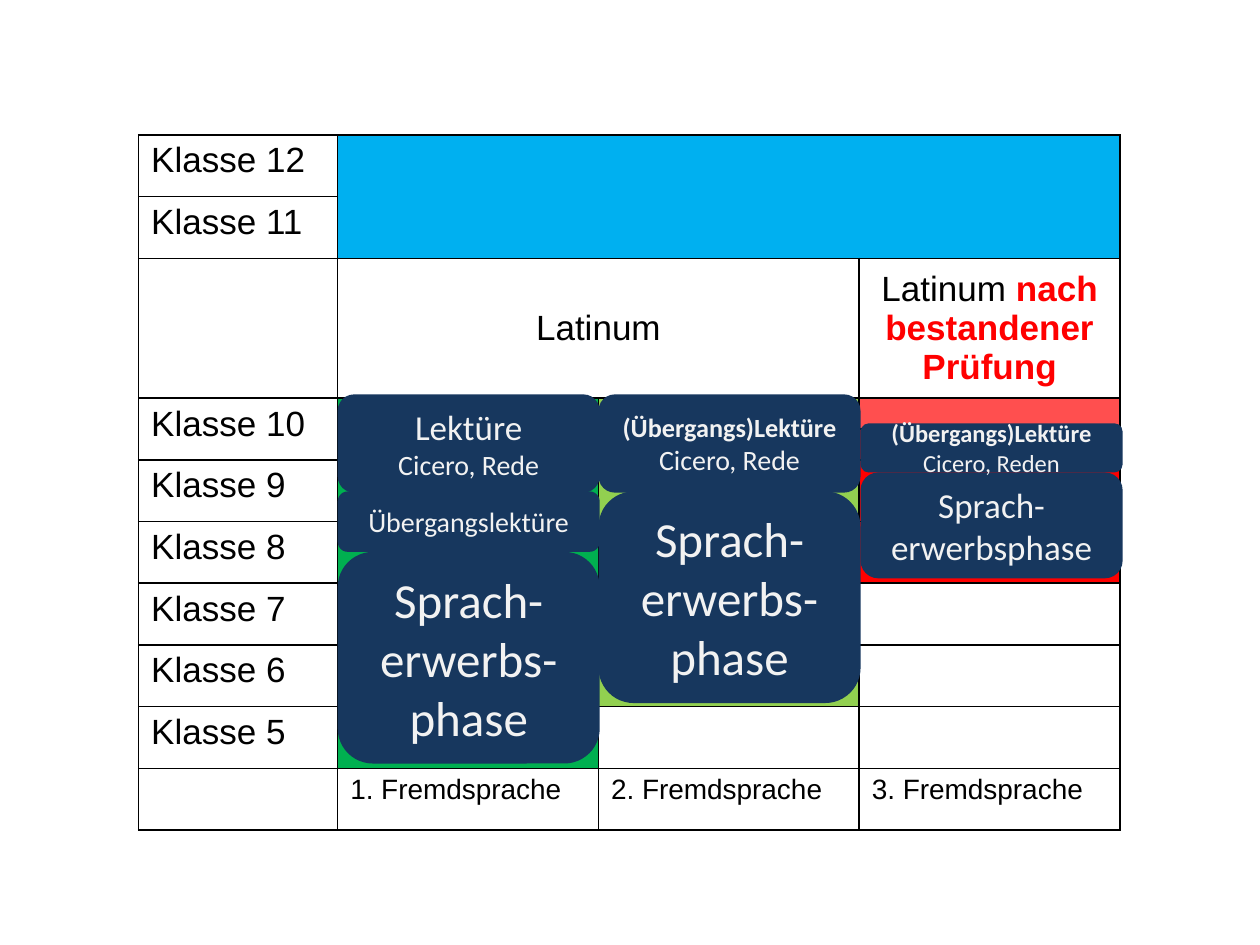
"""Build a slide showing the Latin course phases by school class and language order."""
from dataclasses import dataclass

from lxml import etree
from pptx import Presentation
from pptx.dml.color import RGBColor
from pptx.enum.shapes import MSO_SHAPE
from pptx.enum.text import MSO_ANCHOR, PP_ALIGN
from pptx.oxml.ns import qn
from pptx.slide import Slide
from pptx.table import Table, _Cell
from pptx.text.text import TextFrame
from pptx.util import Inches, Pt

ROUNDED = MSO_SHAPE.ROUNDED_RECTANGLE
MIDDLE = MSO_ANCHOR.MIDDLE
CENTER = PP_ALIGN.CENTER

BLACK = RGBColor(0x00, 0x00, 0x00)
NAVY = RGBColor(0x17, 0x37, 0x5E)
PALE = RGBColor(0xF2, 0xF2, 0xF2)
BLUE = RGBColor(0x00, 0xB0, 0xF0)
GREEN = RGBColor(0x00, 0xB0, 0x50)
LIME = RGBColor(0x92, 0xD0, 0x50)
CORAL = RGBColor(0xFF, 0x4F, 0x4F)
RED = RGBColor(0xFF, 0x00, 0x00)

ROW = 0.49
ROW_HEIGHTS = [ROW, ROW, 1.11, ROW / 2, ROW / 2] + [ROW] * 6
COLUMN_WIDTHS = [1.58, 2.07, 2.07, 2.07]
EXAM_ROW, SPLIT_ROW, LANGUAGE_ROW = 2, 3, 10
CLASS_ROWS = {12: 0, 11: 1, 10: 3, 9: 5, 8: 6, 7: 7, 6: 8, 5: 9}
MERGES = [((0, 1), (1, 3)), ((2, 1), (2, 2))] + [
    ((SPLIT_ROW, column), (SPLIT_ROW + 1, column)) for column in range(3)
]


@dataclass(frozen=True)
class Area:
    """A coloured block of table cells, with inclusive bounds."""

    color: RGBColor
    rows: tuple[int, int]
    columns: tuple[int, int]


@dataclass(frozen=True)
class Line:
    """One paragraph of a phase box."""

    text: str
    size: int
    bold: bool = False


@dataclass(frozen=True)
class Phase:
    """A rounded box for one learning phase."""

    left: float
    top: float
    height: float
    lines: tuple[Line, ...]


AREAS = [
    Area(BLUE, (0, 1), (1, 3)),
    Area(GREEN, (3, 9), (1, 1)),
    Area(LIME, (3, 8), (2, 2)),
    Area(CORAL, (3, 3), (3, 3)),
    Area(RED, (4, 6), (3, 3)),
]

PHASE_WIDTH = 2.08
FIRST, SECOND, THIRD = 2.68, 4.75, 6.83
ACQUISITION = (Line("Sprach-erwerbs-phase", 28),)
READING = "(Übergangs)Lektüre"
SPEECH = Line("Cicero, Rede", 16)
PHASES = [
    Phase(FIRST, 4.38, 1.68, ACQUISITION),
    Phase(FIRST, 3.9, 0.48, (Line("Übergangslektüre", 16),)),
    Phase(FIRST, 3.13, 0.78, (Line("Lektüre", 20), SPEECH)),
    Phase(SECOND, 3.9, 1.68, ACQUISITION),
    Phase(SECOND, 3.13, 0.78, (Line(READING, 15, True), SPEECH)),
    Phase(THIRD, 3.75, 0.84, (Line("Sprach-erwerbsphase", 20),)),
    Phase(THIRD, 3.36, 0.39, (Line(READING, 14, True), Line("Cicero, Reden", 14))),
]


def format_runs(text_frame: TextFrame, name: str, size: int, color: RGBColor) -> None:
    """Give every run of a text frame the same font."""
    for paragraph in text_frame.paragraphs:
        for run in paragraph.runs:
            run.font.name = name
            run.font.size = Pt(size)
            run.font.color.rgb = color


def draw_borders(cell: _Cell, dashed_side: str | None) -> None:
    """Outline a cell in black, with at most one dashed side."""
    properties = cell._tc.get_or_add_tcPr()
    for side in ("lnL", "lnR", "lnT", "lnB"):
        border = etree.SubElement(properties, qn(f"a:{side}"), w=str(Pt(1)))
        fill = etree.SubElement(border, qn("a:solidFill"))
        etree.SubElement(fill, qn("a:srgbClr"), val=str(BLACK))
        style = "sysDash" if side == dashed_side else "solid"
        etree.SubElement(border, qn("a:prstDash"), val=style)


def style_cell(table: Table, row: int, column: int) -> None:
    """Set the borders, fill and empty-line size of one cell."""
    cell = table.cell(row, column)
    dashed_sides = {(SPLIT_ROW, 3): "lnB", (SPLIT_ROW + 1, 3): "lnT"}
    draw_borders(cell, dashed_sides.get((row, column)))
    cell.fill.background()
    for area in AREAS:
        if (area.rows[0] <= row <= area.rows[1]
                and area.columns[0] <= column <= area.columns[1]):
            cell.fill.solid()
            cell.fill.fore_color.rgb = area.color
    if not cell.text_frame.text:
        paragraph = cell.text_frame.paragraphs[0]
        etree.SubElement(paragraph._p, qn("a:endParaRPr"), sz="800")


def write_cell(cell: _Cell, text: str, size: int = 20, centered: bool = False) -> None:
    """Write plain black text into a cell."""
    cell.text_frame.text = text
    if centered:
        cell.vertical_anchor = MIDDLE
        cell.text_frame.paragraphs[0].alignment = CENTER
    format_runs(cell.text_frame, "Arial", size, BLACK)


def add_class_table(slide: Slide) -> None:
    """Add the table of classes and languages."""
    table = slide.shapes.add_table(
        len(ROW_HEIGHTS), len(COLUMN_WIDTHS), Inches(1.1), Inches(1.07),
        Inches(sum(COLUMN_WIDTHS)), Inches(sum(ROW_HEIGHTS)),
    ).table
    table.first_row = False
    table.horz_banding = False
    for column, width in zip(table.columns, COLUMN_WIDTHS):
        column.width = Inches(width)
    for row, height in zip(table.rows, ROW_HEIGHTS):
        row.height = Inches(height)
    for start, end in MERGES:
        table.cell(*start).merge(table.cell(*end))

    for number, row in CLASS_ROWS.items():
        write_cell(table.cell(row, 0), f"Klasse {number}")
    for number in range(1, 4):
        write_cell(table.cell(LANGUAGE_ROW, number), f"{number}. Fremdsprache", 16)
    write_cell(table.cell(EXAM_ROW, 1), "Latinum", centered=True)
    exam_cell = table.cell(EXAM_ROW, 3)
    write_cell(exam_cell, "Latinum ", centered=True)
    condition = exam_cell.text_frame.paragraphs[0].add_run()
    condition.text = "nach bestandener Prüfung"
    format_runs(exam_cell.text_frame, "Arial", 20, BLACK)
    condition.font.bold = True
    condition.font.color.rgb = RED

    for row in range(len(ROW_HEIGHTS)):
        for column in range(len(COLUMN_WIDTHS)):
            style_cell(table, row, column)


def add_phase(slide: Slide, phase: Phase) -> None:
    """Add one phase box with its centred lines."""
    shape = slide.shapes.add_shape(
        ROUNDED, Inches(phase.left), Inches(phase.top),
        Inches(PHASE_WIDTH), Inches(phase.height),
    )
    shape.shadow.inherit = False
    shape.fill.solid()
    shape.fill.fore_color.rgb = NAVY
    shape.line.fill.background()
    text_frame = shape.text_frame
    text_frame.word_wrap = True
    text_frame.vertical_anchor = MIDDLE
    text_frame.text = "\n".join(line.text for line in phase.lines)
    format_runs(text_frame, "Calibri", phase.lines[0].size, PALE)
    for paragraph, line in zip(text_frame.paragraphs, phase.lines):
        paragraph.alignment = CENTER
        paragraph.runs[0].font.size = Pt(line.size)
        paragraph.runs[0].font.bold = line.bold


def main() -> None:
    """Build and save the presentation."""
    presentation = Presentation()
    presentation.slide_width = Inches(10)
    presentation.slide_height = Inches(7.5)
    slide = presentation.slides.add_slide(presentation.slide_layouts[6])
    add_class_table(slide)
    for phase in PHASES:
        add_phase(slide, phase)
    presentation.save("out.pptx")


if __name__ == "__main__":
    main()
